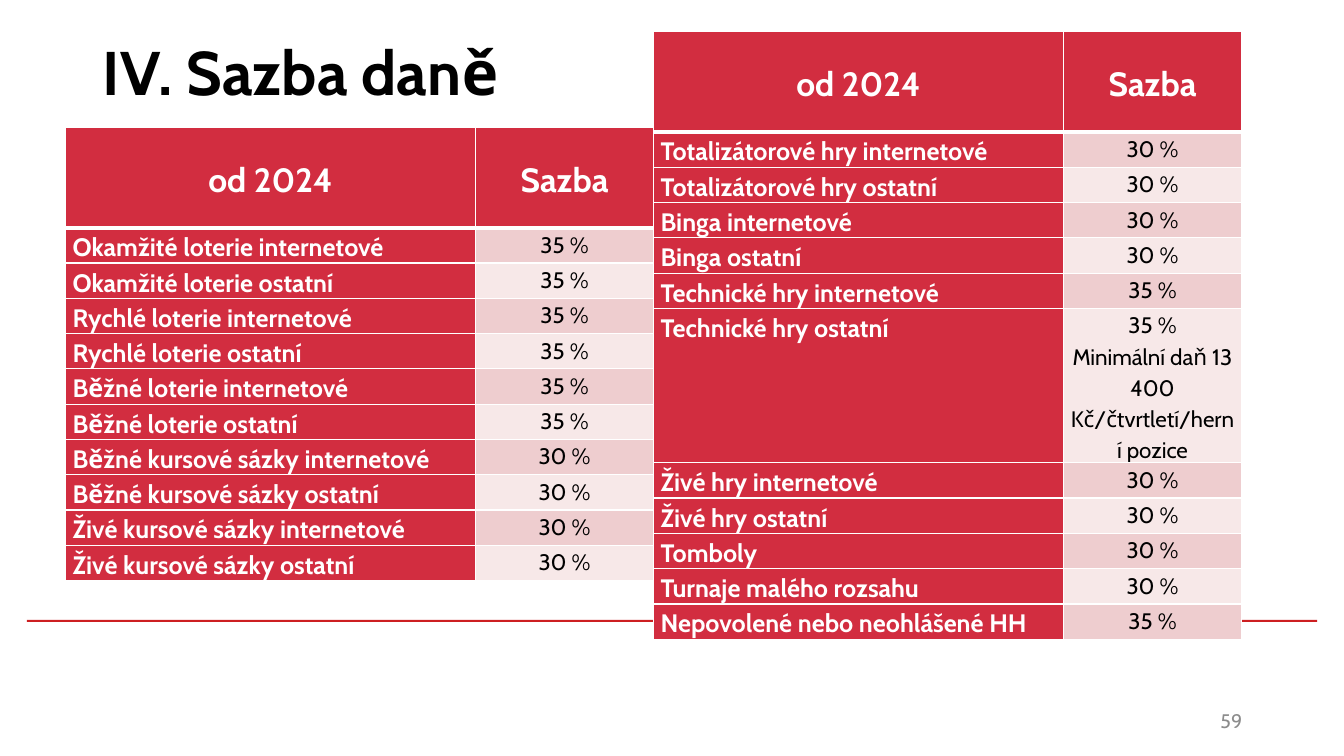
from dataclasses import dataclass
from lxml.etree import SubElement
from pptx import Presentation
from pptx.dml.color import RGBColor
from pptx.enum.shapes import MSO_SHAPE
from pptx.enum.text import MSO_ANCHOR, PP_ALIGN
from pptx.oxml.ns import qn
from pptx.util import Inches, Pt


@dataclass(frozen=True)
class Theme:
    font: str = "Cabin"
    black: str = "000000"
    white: str = "FFFFFF"
    gray: str = "8C8C8C"
    red: str = "D22D40"
    rule: str = "CD1F21"
    bands: tuple = ("EECDCF", "F7E8E8")
    title: int = 44
    head: int = 24
    label: int = 18
    rate: int = 16
    number: int = 14


theme = Theme()
deck = Presentation()
deck.slide_width, deck.slide_height = Inches(13.33), Inches(7.5)
slide = deck.slides.add_slide(deck.slide_layouts[6])
col, row = deck.slide_width / 100, deck.slide_height / 100


def place(x, y, wide, high):
    return int(x * col), int(y * row), int(wide * col), int(high * row)


def write(frame, text, size, color, bold, align, lead):
    frame.word_wrap = True
    frame.text = text
    for para in frame.paragraphs:
        para.alignment = align
        para.line_spacing = lead
        para.font.name = theme.font
        para.font.size = Pt(size)
        para.font.bold = bold
        para.font.color.rgb = RGBColor.from_string(color)


rule = slide.shapes.add_shape(MSO_SHAPE.RECTANGLE, *place(2, 82, 96, 0.27))
rule.shadow.inherit = False
rule.fill.solid()
rule.fill.fore_color.rgb = RGBColor.from_string(theme.rule)
rule.line.fill.background()

labels = [
    ("IV. Sazba daně", (6.9, 0.27, 86.27, 19.33), theme.title, theme.black, True, PP_ALIGN.LEFT, 0.9),
    ("59", (70.67, 92.67, 22.5, 5.33), theme.number, theme.gray, False, PP_ALIGN.RIGHT, 1.0),
]
for text, area, *style in labels:
    frame = slide.shapes.add_textbox(*place(*area)).text_frame
    frame.vertical_anchor = MSO_ANCHOR.MIDDLE
    write(frame, text, *style)

head = ("od 2024", "Sazba")
left = [
    head,
    ("Okamžité loterie internetové", "35 %"),
    ("Okamžité loterie ostatní", "35 %"),
    ("Rychlé loterie internetové", "35 %"),
    ("Rychlé loterie ostatní", "35 %"),
    ("Běžné loterie internetové", "35 %"),
    ("Běžné loterie ostatní", "35 %"),
    ("Běžné kursové sázky internetové", "30 %"),
    ("Běžné kursové sázky ostatní", "30 %"),
    ("Živé kursové sázky internetové", "30 %"),
    ("Živé kursové sázky ostatní", "30 %"),
]
right = [
    head,
    ("Totalizátorové hry internetové", "30 %"),
    ("Totalizátorové hry ostatní", "30 %"),
    ("Binga internetové", "30 %"),
    ("Binga ostatní", "30 %"),
    ("Technické hry internetové", "35 %"),
    ("Technické hry ostatní", "35 %\nMinimální daň 13 400 Kč/čtvrtletí/herní pozice"),
    ("Živé hry internetové", "30 %"),
    ("Živé hry ostatní", "30 %"),
    ("Tomboly", "30 %"),
    ("Turnaje malého rozsahu", "30 %"),
    ("Nepovolené nebo neohlášené HH", "35 %"),
]
widths = (30.5, 13.25)
start, span = 4.88, sum(widths)

for side, (top, lines) in enumerate([(16.8, left), (4.13, right)]):
    highs = [13.33] + [16.4 if "\n" in rate else 4.67 for _, rate in lines[1:]]
    area = place(start + side * span, top, span, sum(highs))
    table = slide.shapes.add_table(len(lines), len(widths), *area).table
    table.horz_banding = False
    for c, wide in enumerate(widths):
        table.columns[c].width = int(wide * col)
    for r, line in enumerate(lines):
        table.rows[r].height = int(highs[r] * row)
        for c, text in enumerate(line):
            cell = table.cell(r, c)
            cell.margin_left = cell.margin_right = Inches(0.07)
            cell.margin_top = cell.margin_bottom = 0
            cell.vertical_anchor = MSO_ANCHOR.TOP if r else MSO_ANCHOR.MIDDLE
            plain = r > 0 and c == 1
            fill = theme.bands[(r - 1) % 2] if plain else theme.red
            ink = theme.black if plain else theme.white
            size = theme.head if r == 0 else (theme.label, theme.rate)[c]
            align = PP_ALIGN.LEFT if r and c == 0 else PP_ALIGN.CENTER
            write(cell.text_frame, text, size, ink, not plain, align, 1.15)
            props = cell._tc.get_or_add_tcPr()
            for edge in "LRTB":
                thick = 3 if (r, edge) in ((0, "B"), (1, "T")) else 1
                border = SubElement(props, qn(f"a:ln{edge}"), w=str(Pt(thick)))
                paint = SubElement(border, qn("a:solidFill"))
                SubElement(paint, qn("a:srgbClr"), val=theme.white)
            cell.fill.solid()
            cell.fill.fore_color.rgb = RGBColor.from_string(fill)

deck.save("out.pptx")
